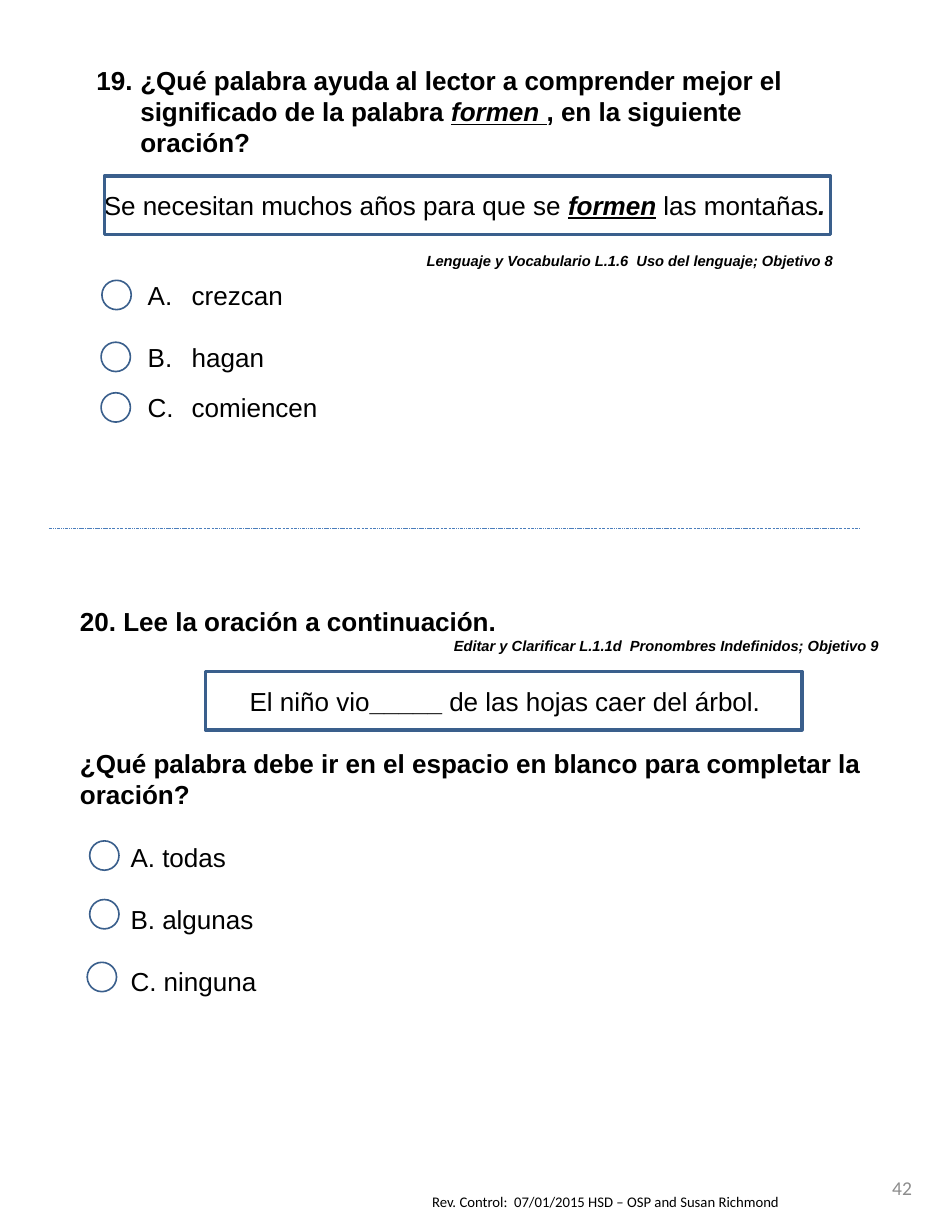
from lxml import etree
from pptx import Presentation
from pptx.dml.color import RGBColor
from pptx.enum.dml import MSO_LINE
from pptx.enum.shapes import MSO_CONNECTOR, MSO_SHAPE
from pptx.enum.text import MSO_ANCHOR, PP_ALIGN as ALIGN
from pptx.oxml.ns import qn
from pptx.util import Pt

COLORS = {"text": "000000", "outline": "3A5F8C", "divider": "4B7EBC",
          "paper": "FFFFFF", "page_number": "8C8C8C"}
CIRCLE = 18


def color(name):
    return RGBColor.from_string(COLORS[name])


def add_text_box(slide, box, anchor=MSO_ANCHOR.TOP):
    frame = slide.shapes.add_textbox(*map(Pt, box)).text_frame
    frame.word_wrap = True
    frame.vertical_anchor = anchor
    return frame


def add_text(frame, runs, size=16, font="Arial", fill="text", align=ALIGN.LEFT,
             before=0, left=0, hanging=0, numbering=None, start=1):
    """Add a paragraph of (text, style) runs; style letters are b, i and u."""
    paragraph = frame.paragraphs[0]
    if paragraph.runs:
        paragraph = frame.add_paragraph()
    paragraph.alignment = align
    paragraph.space_before = Pt(before)
    properties = paragraph._p.get_or_add_pPr()
    properties.set("marL", str(Pt(left)))
    properties.set("indent", str(Pt(-hanging)))
    if numbering:
        bullet = etree.SubElement(properties, qn("a:buAutoNum"), type=numbering)
        if start > 1:
            bullet.set("startAt", str(start))
    for text, style in runs:
        run = paragraph.add_run()
        run.text = text
        run.font.size = Pt(size)
        run.font.name = font
        run.font.color.rgb = color(fill)
        run.font.bold = "b" in style
        run.font.italic = "i" in style
        run.font.underline = "u" in style


def add_outline(slide, kind, box, weight, fill=None):
    shape = slide.shapes.add_shape(kind, *map(Pt, box))
    shape.shadow.inherit = False
    if fill:
        shape.fill.solid()
        shape.fill.fore_color.rgb = color(fill)
    else:
        shape.fill.background()
    shape.line.color.rgb = color("outline")
    shape.line.width = Pt(weight)


def add_answer_marks(slide, box, sentence_frame, circles):
    """Draw the sentence frame and answer circles, offset from the box corner."""
    left, top = box[:2]
    for x, y in circles:
        add_outline(slide, MSO_SHAPE.OVAL,
                    (left + x, top + y, CIRCLE, CIRCLE), 1, "paper")
    x, y, width, height = sentence_frame
    add_outline(slide, MSO_SHAPE.RECTANGLE, (left + x, top + y, width, height), 2)


def add_vocabulary_question(slide, box):
    frame = add_text_box(slide, box)
    add_text(frame, [("¿Qué palabra ayuda al lector a comprender mejor el "
                      "significado de la palabra ", "b"),
                     ("formen ", "biu"), (", en la siguiente oración?", "b")],
             left=27, hanging=27, numbering="arabicPeriod", start=19)
    add_text(frame, [("Se necesitan muchos años para que se ", ""),
                     ("formen", "biu"), (" las montañas", ""), (".", "bi")],
             align=ALIGN.CENTER, before=19)
    add_text(frame, [("Lenguaje y Vocabulario L.1.6  Uso del lenguaje; Objetivo 8", "bi")],
             size=9, align=ALIGN.RIGHT, before=19, left=37, hanging=37)
    for answer, gap in (("crezcan", 6.5), ("hagan", 18.5), ("comiencen", 12)):
        add_text(frame, [(answer, "")], before=gap, left=58.5, hanging=27,
                 numbering="alphaUcPeriod")
    add_answer_marks(slide, box, (12, 72, 445.5, 36),
                     [(10.5, 136), (10, 174), (10, 205)])


def add_grammar_question(slide, box):
    frame = add_text_box(slide, box)
    add_text(frame, [("20. Lee la oración a continuación.", "b")])
    add_text(frame, [("Editar y Clarificar L.1.1d  Pronombres Indefinidos; Objetivo 9", "bi")],
             size=9, align=ALIGN.RIGHT, left=37, hanging=37)
    add_text(frame, [("El niño vio", ""), ("_____ ", "b"),
                     ("de las hojas caer del árbol.", "")],
             align=ALIGN.CENTER, before=19, left=31.5)
    add_text(frame, [("¿Qué palabra debe ir en el espacio en blanco para "
                      "completar la oración?", "b")], before=19)
    for answer in ("A. todas", "B. algunas", "C. ninguna"):
        add_text(frame, [(answer, "")], before=19, left=31)
    add_answer_marks(slide, box, (84, 44, 366, 36),
                     [(13, 148), (13, 184), (11.5, 222.5)])


def add_divider(slide, left, right, y):
    line = slide.shapes.add_connector(MSO_CONNECTOR.STRAIGHT,
                                      Pt(left), Pt(y), Pt(right), Pt(y))
    line.line.color.rgb = color("divider")
    line.line.width = Pt(0.25)
    line.line.dash_style = MSO_LINE.DASH_DOT_DOT
    etree.SubElement(line._element.spPr, qn("a:effectLst"))


def add_footer(slide, note_box, number_box):
    add_text(add_text_box(slide, note_box),
             [("Rev. Control:  07/01/2015 HSD – OSP and Susan Richmond", "")],
             size=9, font="Calibri")
    add_text(add_text_box(slide, number_box, MSO_ANCHOR.MIDDLE), [("42", "")],
             size=12, font="Calibri", fill="page_number", align=ALIGN.RIGHT)


def main():
    presentation = Presentation()
    presentation.slide_width, presentation.slide_height = Pt(576), Pt(756)
    slide = presentation.slides.add_slide(presentation.slide_layouts[6])
    add_vocabulary_question(slide, (52, 36, 466, 241))
    add_divider(slide, 30, 528, 324)
    add_grammar_question(slide, (42, 368, 504, 286))
    add_footer(slide, (258, 728.5, 288, 20), (504, 714, 62.5, 30))
    presentation.save("out.pptx")


if __name__ == "__main__":
    main()
